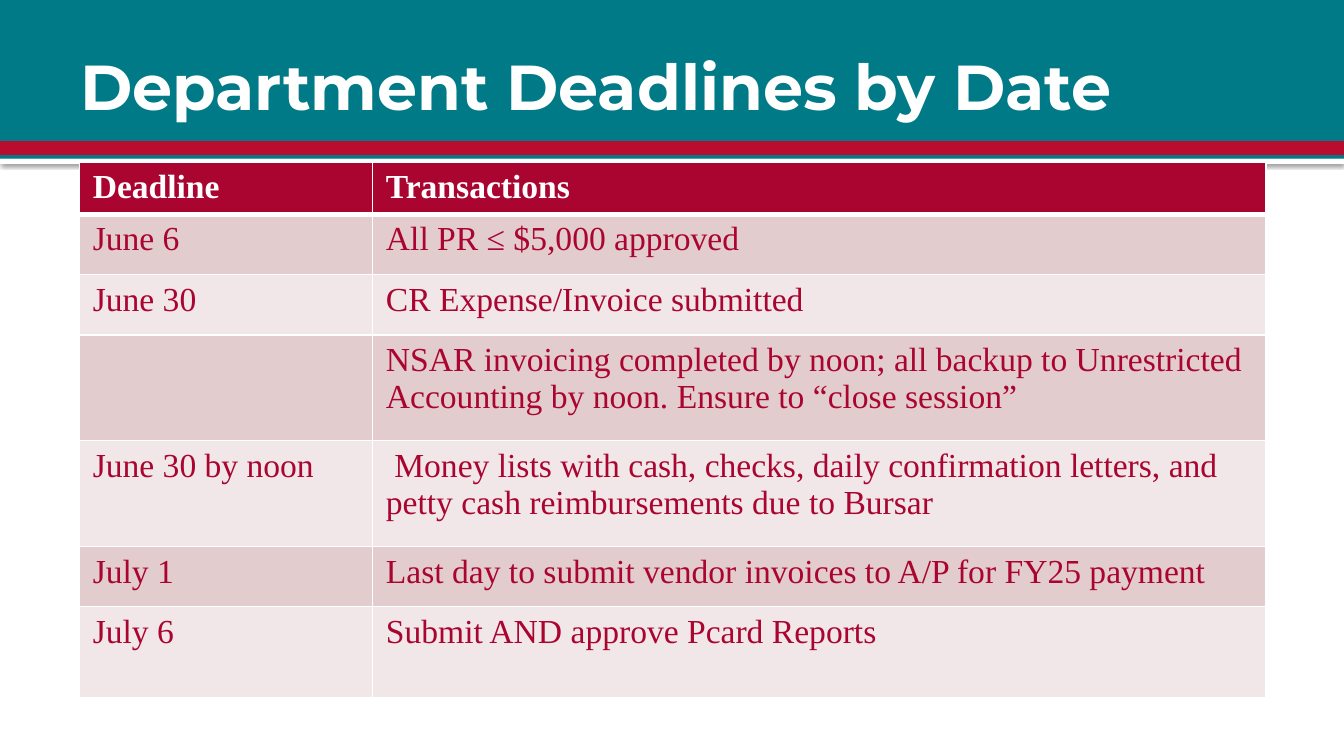
from dataclasses import dataclass

from lxml.etree import SubElement
from pptx import Presentation
from pptx.dml.color import RGBColor
from pptx.enum.shapes import MSO_SHAPE
from pptx.enum.text import MSO_ANCHOR, MSO_AUTO_SIZE, PP_ALIGN
from pptx.oxml.ns import qn
from pptx.util import Cm, Pt


@dataclass(frozen=True)
class Theme:
    teal: str = "007A86"
    red: str = "BA0C2F"
    crimson: str = "AA0530"
    white: str = "FFFFFF"
    bands: tuple = ("E2CCCD", "F1E7E8")
    title_font: str = "Montserrat"
    body_font: str = "Times New Roman"
    title_size: int = 34
    body_size: int = 18


THEME = Theme()

# Deadline, transactions, row height in cm
ROWS = [
    ("Deadline", "Transactions", 0.99),
    ("June 6", "All PR ≤ $5,000 approved", 1.14),
    ("June 30", "CR Expense/Invoice submitted", 1.14),
    ("", "NSAR invoicing completed by noon; all backup to Unrestricted "
         "Accounting by noon. Ensure to “close session”", 2.0),
    ("June 30 by noon", " Money lists with cash, checks, daily confirmation "
                        "letters, and petty cash reimbursements due to Bursar", 2.0),
    ("July 1", "Last day to submit vendor invoices to A/P for FY25 payment", 1.14),
    ("July 6", "Submit AND approve Pcard Reports", 1.73),
]
COLUMNS = (5.54, 16.89)


def rgb(value):
    return RGBColor.from_string(value)


def set_font(p, name, size, color, bold=False):
    p.font.name = name
    p.font.size = Pt(size)
    p.font.bold = bold
    p.font.color.rgb = rgb(color)


def add_bar(s, top, height, fill, line=None):
    """Add a bar across the full slide width."""
    sp = s.shapes.add_shape(MSO_SHAPE.RECTANGLE, 0, Cm(top), Cm(25.4), Cm(height))
    sp.shadow.inherit = False
    sp.fill.solid()
    sp.fill.fore_color.rgb = rgb(fill)
    if line:
        sp.line.color.rgb = rgb(line)
        sp.line.width = Pt(3.78)
    else:
        sp.line.fill.background()
    return sp


def add_drop_shadow(sp):
    effects = sp._element.spPr.find(qn("a:effectLst"))
    shadow = SubElement(effects, qn("a:outerShdw"), blurRad=str(Pt(2.5)),
                        dist=str(Pt(0.8)), dir="5400000", rotWithShape="0")
    color = SubElement(shadow, qn("a:srgbClr"), val="000000")
    SubElement(color, qn("a:alpha"), val="60000")


def set_title(s, text):
    sp = s.shapes.title
    sp.left, sp.top, sp.width, sp.height = Cm(1.27), Cm(0.3), Cm(22.86), Cm(2.62)
    tf = sp.text_frame
    tf.text = text
    tf.word_wrap = True
    tf.auto_size = MSO_AUTO_SIZE.NONE
    tf.vertical_anchor = MSO_ANCHOR.MIDDLE
    tf.margin_left = Cm(0.25)
    tf.margin_right = tf.margin_top = tf.margin_bottom = Cm(0.13)
    p = tf.paragraphs[0]
    p.alignment = PP_ALIGN.LEFT
    set_font(p, THEME.title_font, THEME.title_size, THEME.white, bold=True)
    # Bring the title in front of the header bars
    s.shapes._spTree.append(sp._element)


def set_borders(cell, top, bottom):
    tc_pr = cell._tc.get_or_add_tcPr()
    widths = {"a:lnL": 1, "a:lnR": 1, "a:lnT": top, "a:lnB": bottom}
    for i, (tag, width) in enumerate(widths.items()):
        ln = SubElement(tc_pr, qn(tag), w=str(Pt(width)))
        SubElement(SubElement(ln, qn("a:solidFill")), qn("a:srgbClr"), val=THEME.white)
        tc_pr.insert(i, ln)


def format_cell(cell, text, row):
    header = row == 0
    cell.text = text
    cell.fill.solid()
    cell.fill.fore_color.rgb = rgb(THEME.crimson if header else THEME.bands[(row - 1) % 2])
    set_font(cell.text_frame.paragraphs[0], THEME.body_font, THEME.body_size,
             THEME.white if header else THEME.crimson, bold=header)
    set_borders(cell, top=3 if row == 1 else 1, bottom=3 if header else 1)


def add_deadline_table(s):
    height = sum(row[-1] for row in ROWS)
    table = s.shapes.add_table(len(ROWS), len(COLUMNS), Cm(1.5), Cm(3.06),
                               Cm(sum(COLUMNS)), Cm(height)).table
    for column, width in zip(table.columns, COLUMNS):
        column.width = Cm(width)
    for i, (*texts, row_height) in enumerate(ROWS):
        table.rows[i].height = Cm(row_height)
        for j, text in enumerate(texts):
            format_cell(table.cell(i, j), text, i)


def main():
    prs = Presentation()
    prs.slide_width, prs.slide_height = Cm(25.4), Cm(14.29)
    s = prs.slides.add_slide(prs.slide_layouts[5])

    # Header: shadowed edge, teal band, red stripe
    add_drop_shadow(add_bar(s, 3, 0.1, THEME.white))
    add_bar(s, 0, 3, THEME.teal)
    add_bar(s, 2.74, 0.13, THEME.teal, line=THEME.red)
    set_title(s, "Department Deadlines by Date")

    # Deadlines
    add_deadline_table(s)
    prs.save("out.pptx")


if __name__ == "__main__":
    main()
